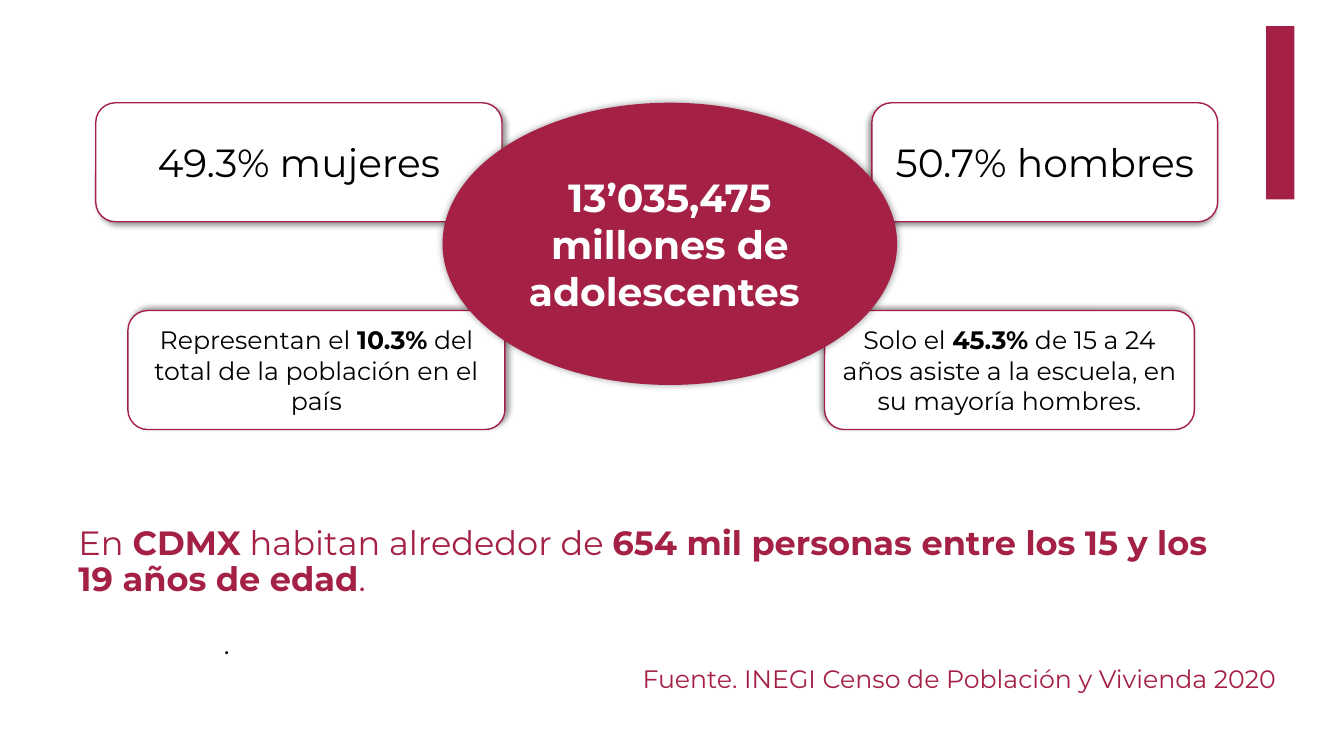
from lxml.etree import SubElement
from pptx import Presentation
from pptx.dml.color import RGBColor
from pptx.enum.shapes import MSO_SHAPE
from pptx.enum.text import MSO_ANCHOR, PP_ALIGN
from pptx.oxml.ns import qn
from pptx.util import Pt

HEX = {"wine": "A42145", "white": "FFFFFF", "black": "000000"}
FONT = "Montserrat"


def tint(name):
    return RGBColor.from_string(HEX[name])


def place(shape, box):
    shape.left, shape.top, shape.width, shape.height = map(Pt, box)


def write(shape, runs, size, color, align=PP_ALIGN.LEFT, font=FONT,
          anchor=MSO_ANCHOR.MIDDLE, space=1.0):
    frame = shape.text_frame
    frame.word_wrap = True
    frame.vertical_anchor = anchor
    para = frame.paragraphs[0]
    para.alignment = align
    para.line_spacing = space
    for text, bold in runs:
        run = para.add_run()
        run.text = text
        run.font.name = font
        run.font.size = Pt(size)
        run.font.bold = bold
        run.font.color.rgb = tint(color)


def shade(shape, blur, dist, angle):
    shape.shadow.inherit = False
    effects = shape._element.spPr.find(qn("a:effectLst"))
    outer = SubElement(effects, qn("a:outerShdw"), blurRad=str(Pt(blur)),
                       dist=str(Pt(dist)), dir=str(angle * 60000),
                       algn="ctr", rotWithShape="0")
    color = SubElement(outer, qn("a:srgbClr"), val=HEX["black"])
    SubElement(color, qn("a:alpha"), val="40000")


def draw(slide, kind, box, fill, line=None):
    shape = slide.shapes.add_shape(kind, *map(Pt, box))
    shape.shadow.inherit = False
    shape.fill.solid()
    shape.fill.fore_color.rgb = tint(fill)
    if line:
        shape.line.color.rgb = tint(line)
        shape.line.width = Pt(1)
    else:
        shape.line.fill.background()
    return shape


def add_text(slide, box, runs, size, color, **style):
    label = slide.shapes.add_textbox(*map(Pt, box))
    write(label, runs, size, color, **style)


def add_title(slide, box):
    title = slide.shapes.title
    place(title, box)
    write(title, [("Fuente. INEGI Censo de Población y Vivienda 2020", False)],
          18, "wine", PP_ALIGN.RIGHT, anchor=MSO_ANCHOR.BOTTOM, space=0.9)
    title.text_frame.margin_bottom = Pt(6)


def add_facts(slide, box):
    left, top, width, height = box
    tall, low = 85, 148.4
    cards = [
        (0, 0, 290.2, 45, 28, [("49.3% mujeres", False)]),
        (554.4, 0, 247, 135, 28, [("50.7% hombres", False)]),
        (23, low, 269.3, 315, 18,
         [("Representan el ", False), ("10.3%", True),
          (" del total de la población en el país", False)]),
        (520.6, low, 264.2, 225, 18,
         [("Solo el ", False), ("45.3%", True),
          (" de 15 a 24 años asiste a la escuela, en su mayoría hombres.", False)]),
    ]
    for x, y, wide, angle, size, runs in cards:
        card = draw(slide, MSO_SHAPE.ROUNDED_RECTANGLE,
                    (left + x, top + y, wide, tall), "white", "wine")
        shade(card, 4, 3, angle)
        write(card, runs, size, "black", PP_ALIGN.CENTER)
    hub = draw(slide, MSO_SHAPE.OVAL, (left + 247.7, top, 324.7, 201.6), "wine")
    shade(hub, 5, 0, 0)
    write(hub, [("13’035,475 millones de adolescentes ", True)],
          28, "white", PP_ALIGN.CENTER)


def main():
    deck = Presentation()
    deck.slide_width, deck.slide_height = Pt(960), Pt(540)
    slide = deck.slides.add_slide(deck.slide_layouts[5])
    draw(slide, MSO_SHAPE.RECTANGLE, (904.3, 18.7, 20.2, 123.8), "wine")
    add_text(slide, (152.6, 445.7, 480, 28.8), [(".", False)], 18, "black",
             font="Calibri", anchor=MSO_ANCHOR.TOP)
    add_title(slide, (79.2, 447.8, 839.5, 54))
    add_facts(slide, (68.4, 73.4, 801.4, 233.4))
    add_text(slide, (49, 359.3, 839.5, 85),
             [("En ", False), ("CDMX", True), (" habitan alrededor de ", False),
              ("654 mil personas entre los 15 y los 19 años de edad", True),
              (".", False)], 24, "wine", space=0.9)
    deck.save("out.pptx")


if __name__ == "__main__":
    main()
